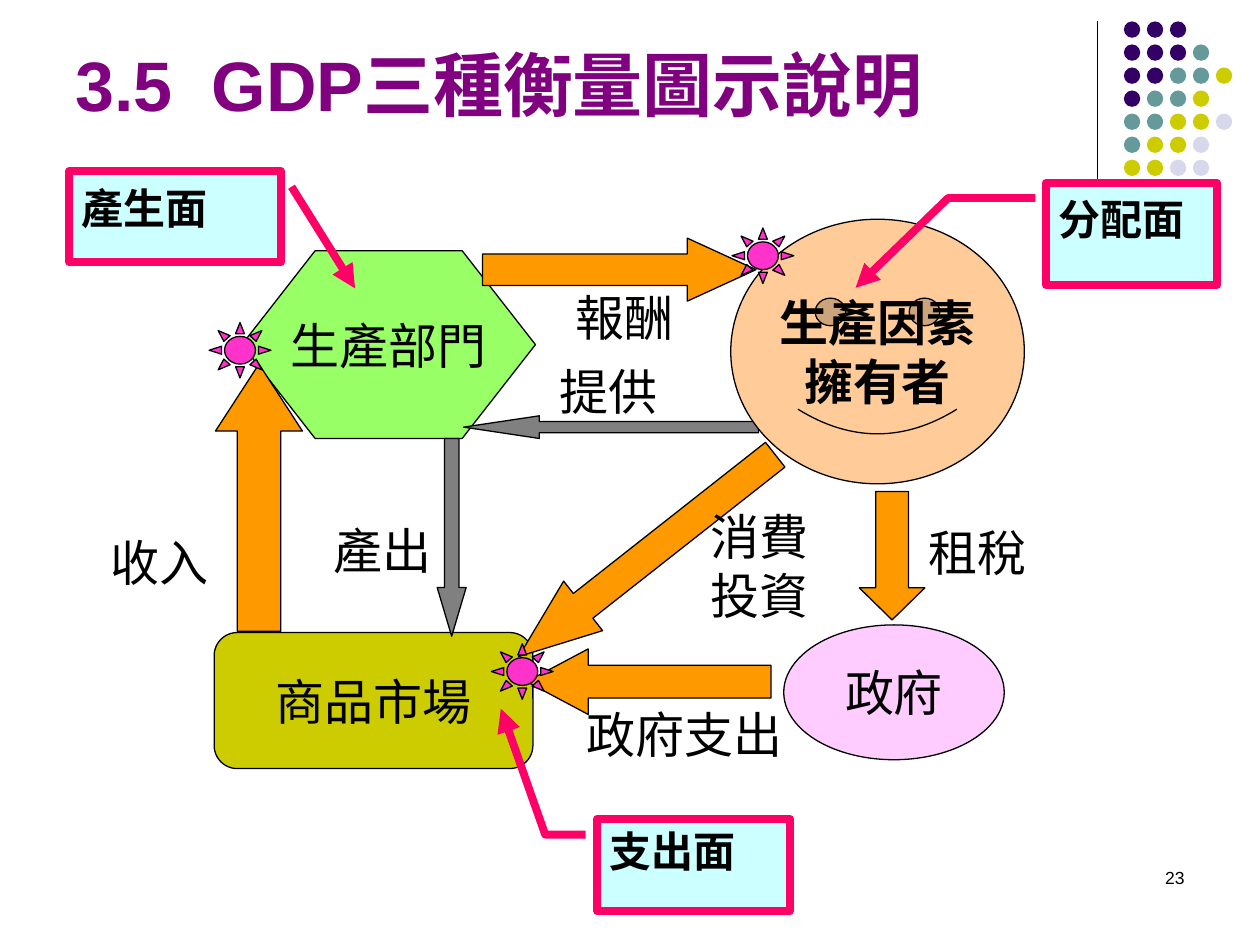
from dataclasses import dataclass

from lxml.etree import SubElement
from pptx import Presentation
from pptx.dml.color import RGBColor
from pptx.enum.shapes import MSO_CONNECTOR, MSO_SHAPE
from pptx.enum.text import MSO_ANCHOR, MSO_AUTO_SIZE, PP_ALIGN
from pptx.oxml.ns import qn
from pptx.util import Emu, Pt

EMU_PER_PX = 9144


@dataclass(frozen=True)
class Theme:
    latin: str = "Arial"
    cjk: str = "Noto Sans CJK TC"
    title_size: int = 40
    label_size: int = 28
    callout_size: int = 24
    number_size: int = 10
    outline_width: float = 0.75
    callout_width: float = 4.5
    ink: str = "000000"
    title: str = "800080"
    production: str = "99FF66"
    government: str = "FFCCFF"
    market: str = "CCCC00"
    owners: str = "FFCC99"
    money: str = "FF9900"
    goods: str = "808080"
    sun: str = "FF33CC"
    callout_fill: str = "CCFFFF"
    callout_line: str = "FF0066"


THEME = Theme()
DOT_COLORS = {"P": "330066", "T": "669999", "Y": "CCCC00", "L": "D8D8EC"}
DOT_ROWS = ["PPP", "PPPT", "PPTTY", "PTTY", "TTYYL", "TYYL", "YYLL", " L L"]


@dataclass(frozen=True)
class Box:
    left: int
    top: int
    width: int
    height: int

    def inner(self, left, top, width, height):
        return Box(self.left + left, self.top + top, width, height)

    def emu(self):
        lengths = (self.left, self.top, self.width, self.height)
        return [px(length) for length in lengths]


def px(length):
    return Emu(round(length * EMU_PER_PX))


def write(frame, text, size=THEME.label_size, color=THEME.ink, bold=False,
          latin=THEME.latin, align=PP_ALIGN.LEFT, anchor=MSO_ANCHOR.TOP,
          wrap=True, spacing=None):
    frame.auto_size = MSO_AUTO_SIZE.NONE
    frame.word_wrap = wrap
    frame.vertical_anchor = anchor
    for index, line in enumerate(text.split("\n")):
        paragraph = frame.add_paragraph() if index else frame.paragraphs[0]
        paragraph.alignment = align
        if spacing:
            paragraph.line_spacing = spacing
        run = paragraph.add_run()
        run.text = line
        run.font.size = Pt(size)
        run.font.bold = bold
        run.font.color.rgb = RGBColor.from_string(color)
        run.font.name = latin
        SubElement(run.font._element, qn("a:ea"), typeface=THEME.cjk)


def add_label(slide, box, text, **text_format):
    write(slide.shapes.add_textbox(*box.emu()).text_frame, text, **text_format)


def add_figure(slide, kind, box, fill, line=THEME.ink, width=THEME.outline_width,
               adjustments=(), rotation=0):
    figure = slide.shapes.add_shape(kind, *box.emu())
    figure.shadow.inherit = False
    figure.fill.solid()
    figure.fill.fore_color.rgb = RGBColor.from_string(fill)
    if line:
        figure.line.color.rgb = RGBColor.from_string(line)
        figure.line.width = Pt(width)
    else:
        figure.line.fill.background()
    for index, value in enumerate(adjustments):
        figure.adjustments[index] = value
    figure.rotation = rotation
    return figure


def add_sector(slide, box, text, kind, fill, adjustments=(), bold=False):
    sector = add_figure(slide, kind, box, fill, adjustments=adjustments)
    write(sector.text_frame, text, bold=bold, align=PP_ALIGN.CENTER,
          anchor=MSO_ANCHOR.MIDDLE, wrap=False)


def add_flow(slide, arrow_box, label_box, text, kind, fill, head, rotation=0,
             align=PP_ALIGN.LEFT):
    add_figure(slide, kind, arrow_box, fill, adjustments=(0.5, head), rotation=rotation)
    add_label(slide, label_box, text, align=align)


def add_callout(slide, box, text, adjustments, spacing=None):
    callout = add_figure(slide, MSO_SHAPE.LINE_CALLOUT_2, box, THEME.callout_fill,
                         line=THEME.callout_line, width=THEME.callout_width,
                         adjustments=adjustments)
    SubElement(callout.line._get_or_add_ln(), qn("a:tailEnd"), type="triangle")
    write(callout.text_frame, text, size=THEME.callout_size, bold=True,
          latin=THEME.cjk, spacing=spacing)


def add_corner_ornament(slide, box, dot=13, margin=21):
    rule = slide.shapes.add_connector(MSO_CONNECTOR.STRAIGHT, px(box.left), px(box.top),
                                      px(box.left), px(box.top + box.height))
    rule.line.color.rgb = RGBColor.from_string(THEME.ink)
    rule.line.width = Pt(THEME.outline_width)
    SubElement(rule._element.spPr, qn("a:effectLst"))
    column_step = (box.width - margin - dot) / 4
    row_step = (box.height - 25 - dot) / (len(DOT_ROWS) - 1)
    for row, pattern in enumerate(DOT_ROWS):
        for column, code in enumerate(pattern):
            if code in DOT_COLORS:
                dot_box = box.inner(margin + column * column_step, row * row_step, dot, dot)
                add_figure(slide, MSO_SHAPE.OVAL, dot_box, DOT_COLORS[code], line=None)


def add_title(slide, box, text, tab):
    title = slide.shapes.title
    title.left, title.top, title.width, title.height = box.emu()
    write(title.text_frame, text, size=THEME.title_size, color=THEME.title, bold=True,
          anchor=MSO_ANCHOR.BOTTOM)
    properties = title.text_frame.paragraphs[0]._p.get_or_add_pPr()
    stops = SubElement(properties, qn("a:tabLst"))
    SubElement(stops, qn("a:tab"), pos=str(px(tab)), algn="l")


def add_circulation(slide, box):
    at = box.inner
    left, down = MSO_SHAPE.LEFT_ARROW, MSO_SHAPE.DOWN_ARROW
    money, goods = THEME.money, THEME.goods

    add_sector(slide, at(114, 25, 233, 149), "生產部門", MSO_SHAPE.HEXAGON,
               THEME.production, (0.39,))
    add_sector(slide, at(544, 322, 175, 107), "政府", MSO_SHAPE.OVAL, THEME.government)
    add_sector(slide, at(92, 328, 253, 108), "商品市場", MSO_SHAPE.ROUNDED_RECTANGLE,
               THEME.market, (0.17,))
    add_flow(slide, at(290, 156, 234, 18), at(356, 108, 117, 57), "提供", left, goods, 3.34)
    add_flow(slide, at(305, 15, 217, 50), at(349, 49, 117, 57), "報酬", left, money, 1.09,
             rotation=180, align=PP_ALIGN.RIGHT)
    add_sector(slide, at(502, 0, 233, 210), "生產因素\n擁有者", MSO_SHAPE.SMILEY_FACE,
               THEME.owners, (0.05,), bold=True)
    add_flow(slide, at(269, 174, 23, 157), at(157, 234, 117, 57), "產出", down, goods, 1.68,
             align=PP_ALIGN.RIGHT)
    add_flow(slide, at(93, 115, 69, 212), at(0, 244, 117, 57), "收入", down, money, 0.77,
             rotation=180)
    add_flow(slide, at(306, 242, 259, 50), at(476, 223, 181, 103), "消費\n投資", left, money,
             1.3, rotation=321.8)
    add_flow(slide, at(579, 241, 102, 52), at(649, 236, 117, 57), "租稅", left, money, 0.49,
             rotation=270)
    add_flow(slide, at(340, 341, 194, 52), at(378, 380, 238, 57), "政府支出", left, money, 0.94)
    for sun_left, sun_top in ((312, 337), (503, 7), (88, 82)):
        add_figure(slide, MSO_SHAPE.SUN, at(sun_left, sun_top, 49, 44), THEME.sun,
                   adjustments=(0.25,))


def add_measures(slide, box):
    at = box.inner
    add_callout(slide, at(775, 9, 136, 81), "分配面",
                (0.15, -0.06, 0.15, -0.57, 1.03, -1.11), spacing=1.1)
    add_callout(slide, at(0, 0, 168, 72), "產生面",
                (0.17, 1.05, 0.17, 1.05, 1.29, 1.35), spacing=1.1)
    add_callout(slide, at(419, 514, 153, 73), "支出面",
                (0.17, -0.06, 0.17, -0.27, -1.2, -0.5))


def main():
    presentation = Presentation()
    presentation.slide_width, presentation.slide_height = px(1000), px(750)
    slide = presentation.slides.add_slide(presentation.slide_layouts[5])
    add_corner_ornament(slide, Box(871, 17, 107, 166))
    add_title(slide, Box(50, 13, 817, 92), "3.5\tGDP三種衡量圖示說明", tab=108)
    add_circulation(slide, Box(78, 174, 766, 437))
    add_measures(slide, Box(55, 136, 911, 587))
    add_label(slide, Box(717, 683, 233, 50), "23", size=THEME.number_size,
              align=PP_ALIGN.RIGHT)
    presentation.save("out.pptx")


if __name__ == "__main__":
    main()
